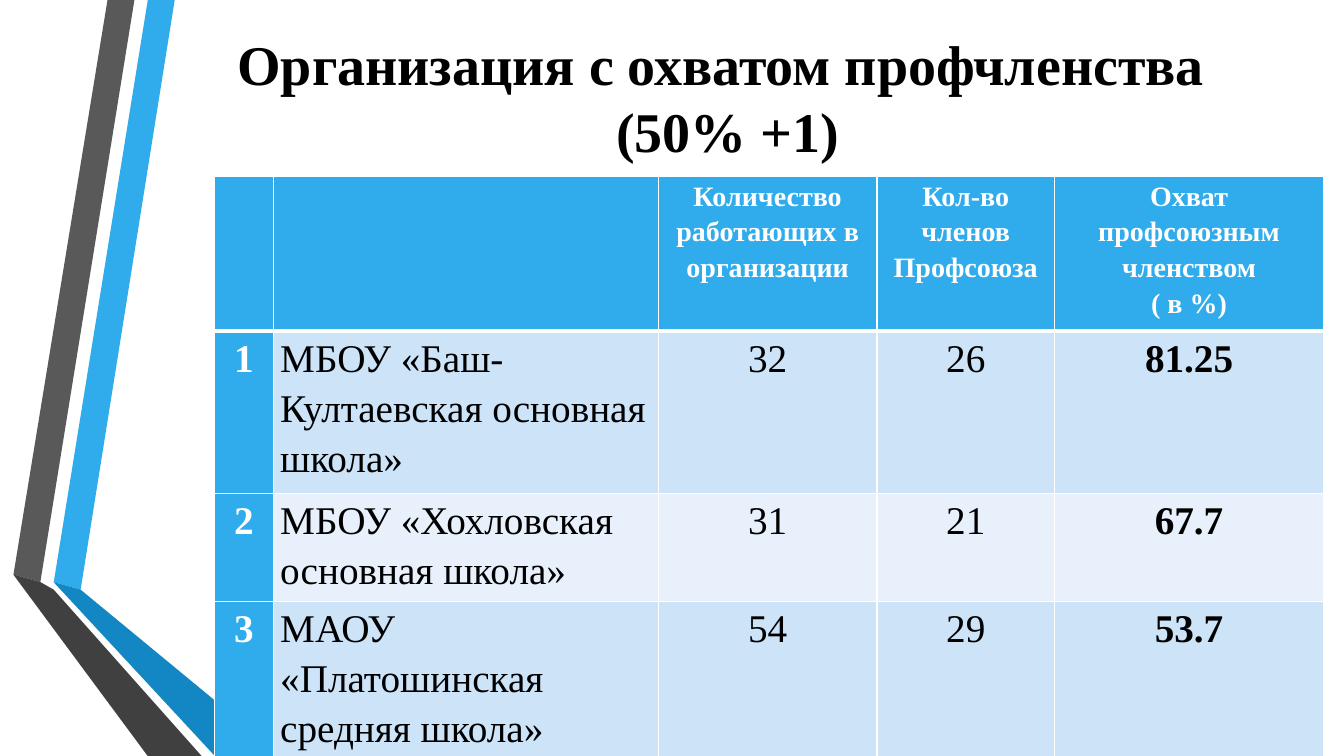
"""Build the slide on union membership coverage by school."""
import dataclasses

import lxml.etree
import pptx
import pptx.dml.color
import pptx.enum.text
import pptx.oxml.ns
import pptx.util

ALIGN = pptx.enum.text.PP_ALIGN
ANCHOR = pptx.enum.text.MSO_ANCHOR


@dataclasses.dataclass(frozen=True)
class Theme:
    """Colours, font and type sizes of the slide."""
    font: str = "Times New Roman"
    title_size: int = 40
    head_size: int = 20
    body_size: int = 28
    black: str = "000000"
    white: str = "FFFFFF"
    accent: str = "30ACEC"
    accent_dark: str = "1287C3"
    accent_deep: str = "0C5A82"
    grey: str = "595959"
    grey_dark: str = "404040"
    grey_deep: str = "262626"
    bands: tuple = ("CDE3F8", "E8F1FB")


THEME = Theme()
WIDTH, HEIGHT = pptx.util.Inches(13.33), pptx.util.Inches(7.5)

RIBBONS = [
    (THEME.accent, [(3.75, 77.07), (5.78, 77.73), (12.98, 0), (10.88, 0)]),
    (THEME.grey, [(10.43, 0), (8.33, 0), (1.2, 76.4), (3.3, 76.93)]),
    (THEME.grey_deep, [(1.2, 76.4), (10.88, 100), (11.33, 100)]),
    (THEME.accent_deep, [(3.75, 77.2), (15.6, 100), (16.05, 100)]),
    (THEME.accent_dark, [(3.75, 77.07), (16.05, 100), (21.23, 100), (5.78, 77.73)]),
    (THEME.grey_dark, [(15.15, 100), (3.6, 77.73), (3.3, 76.93), (1.2, 76.4), (11.33, 100)]),
]

TITLE = "Организация с охватом профчленства \v(50% +1)"
COLUMNS = [4.35, 28.65, 16.28, 13.2, 20.03]
ROWS = [19.47, 20.27, 13.6, 20.27]
CELLS = [
    ["", "", "Количество работающих в организации", "Кол-во членов Профсоюза",
     "Охват профсоюзным членством\n( в %)"],
    ["1", "МБОУ «Баш-Култаевская основная школа»", "32", "26", "81.25"],
    ["2", "МБОУ «Хохловская\nосновная школа»", "31", "21", "67.7"],
    ["3", "МАОУ «Платошинская\nсредняя школа»", "54", "29", "53.7"],
]


def across(share):
    """Return a percentage of the slide's width."""
    return round(WIDTH * share / 100)


def down(share):
    """Return a percentage of the slide's height."""
    return round(HEIGHT * share / 100)


def rgb(value):
    """Return a colour object for a hex value."""
    return pptx.dml.color.RGBColor.from_string(value)


def assign(target, values):
    """Set each attribute of the target from a dict."""
    for name, value in values.items():
        setattr(target, name, value)


def write(tf, text, color, paragraph, **font):
    """Write text into a frame, one paragraph per line."""
    tf.text = text
    for p in tf.paragraphs:
        assign(p, paragraph)
        for r in p.runs:
            assign(r.font, {"name": THEME.font, **font})
            r.font.color.rgb = rgb(color)


def add_ribbon(s, color, points):
    """Draw one filled polygon of the side ribbon."""
    builder = s.shapes.build_freeform(*points[0], scale=(WIDTH / 100, HEIGHT / 100))
    builder.add_line_segments(points[1:], close=True)
    sp = builder.convert_to_shape()
    sp.shadow.inherit = False
    sp.fill.solid()
    sp.fill.fore_color.rgb = rgb(color)
    sp.line.fill.background()


def add_title(s):
    """Add the centred heading."""
    sp = s.shapes.add_textbox(across(13.05), 0, across(82.2), down(25.6))
    tf = sp.text_frame
    assign(tf, {"word_wrap": True, "vertical_anchor": ANCHOR.MIDDLE})
    write(tf, TITLE, THEME.black, {"alignment": ALIGN.CENTER},
          size=pptx.util.Pt(THEME.title_size), bold=True)


def add_borders(cell, widths):
    """Give a cell white borders of the given widths."""
    tag = pptx.oxml.ns.qn
    for side, points in widths.items():
        line = lxml.etree.SubElement(cell._tc.get_or_add_tcPr(), tag(f"a:ln{side}"),
                                     w=str(pptx.util.Pt(points)))
        fill = lxml.etree.SubElement(line, tag("a:solidFill"))
        lxml.etree.SubElement(fill, tag("a:srgbClr"), val=THEME.white)


def format_cell(cell, row, column, text):
    """Fill, frame and write one table cell."""
    head, label = row == 0, row == 0 or column == 0
    inset = pptx.util.Inches(0.07)
    assign(cell, {"margin_left": inset, "margin_right": inset,
                  "margin_top": 0, "margin_bottom": 0})
    add_borders(cell, {"L": 1, "R": 1, "T": 3 if row == 1 else 1, "B": 3 if head else 1})
    cell.fill.solid()
    cell.fill.fore_color.rgb = rgb(THEME.accent if label else THEME.bands[(row - 1) % 2])
    if text:
        align = ALIGN.LEFT if column == 1 else ALIGN.CENTER
        write(cell.text_frame, text, THEME.white if label else THEME.black,
              {"alignment": align, "line_spacing": 1.15},
              size=pptx.util.Pt(THEME.head_size if head else THEME.body_size),
              bold=label or column == len(COLUMNS) - 1)


def add_coverage_table(s):
    """Add the table of schools and their membership."""
    table = s.shapes.add_table(len(ROWS), len(COLUMNS), across(15.98), down(23.33),
                               across(sum(COLUMNS)), down(sum(ROWS))).table
    for column, share in zip(table.columns, COLUMNS):
        column.width = across(share)
    for row, share in zip(table.rows, ROWS):
        row.height = down(share)
    for i, texts in enumerate(CELLS):
        for j, text in enumerate(texts):
            format_cell(table.cell(i, j), i, j, text)


def main():
    """Build and save the presentation."""
    prs = pptx.Presentation()
    assign(prs, {"slide_width": WIDTH, "slide_height": HEIGHT})
    s = prs.slides.add_slide(prs.slide_layouts[6])
    for color, points in RIBBONS:
        add_ribbon(s, color, points)
    add_title(s)
    add_coverage_table(s)
    prs.save("out.pptx")


if __name__ == "__main__":
    main()
